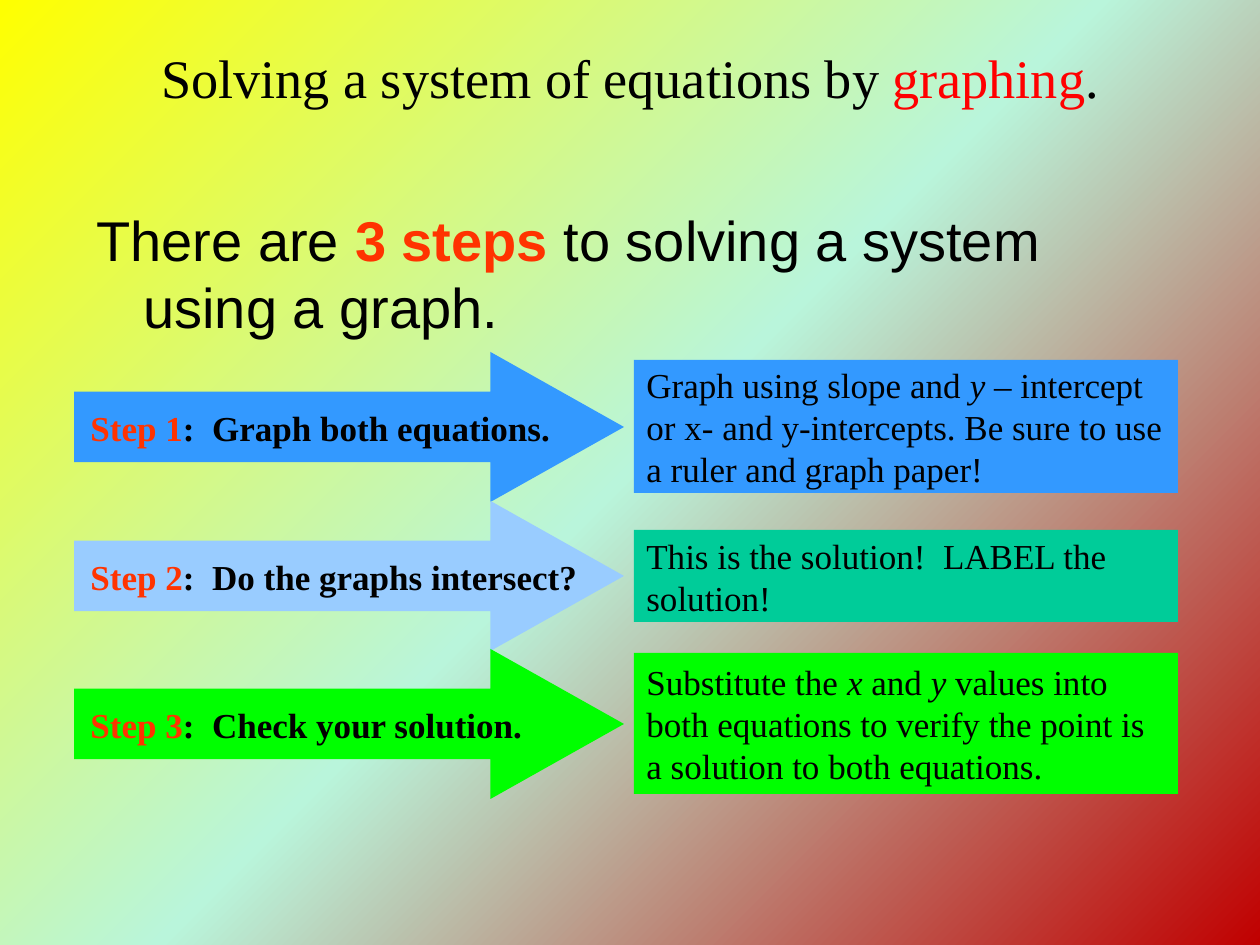
from copy import deepcopy

from pptx import Presentation
from pptx.dml.color import RGBColor
from pptx.enum.shapes import MSO_SHAPE
from pptx.enum.text import PP_ALIGN
from pptx.oxml.ns import qn
from pptx.util import Emu, Pt

PX = 914400 // 126
SERIF, SANS = "Times New Roman", "Arial"
COLORS = {
    "yellow": "FFFF00", "mint": "B9F5DB", "crimson": "C00000",
    "black": "000000", "red": "FF0000", "orange": "FF3300",
    "blue": "3399FF", "sky": "99CCFF", "teal": "00CC99", "green": "00FF00",
}
BACKDROP = [(0, "yellow"), (0.5, "mint"), (1, "crimson")]

TITLE = [("Solving a system of equations by ", "black", ""),
         ("graphing", "red", ""), (".", "black", "")]
INTRO = [("There are ", "black", ""), ("3 steps", "orange", "b"),
         (" to solving a system using a graph.", "black", "")]
STEPS = [
    dict(label="Step 1", task=":  Graph both equations.", arrow_color="blue", arrow_top=352,
         panel_color="blue", panel_top=360, panel_height=133, lines=3,
         detail=[("Graph using slope and ", "black", ""), ("y", "black", "i"),
                 (" – intercept or x- and y-intercepts. Be sure to use a ruler and graph paper!",
                  "black", "")]),
    dict(label="Step 2", task=":  Do the graphs intersect?", arrow_color="sky", arrow_top=501,
         panel_color="teal", panel_top=530, panel_height=92, lines=2,
         detail=[("This is the solution!  LABEL the solution!", "black", "")]),
    dict(label="Step 3", task=":  Check your solution.", arrow_color="green", arrow_top=649,
         panel_color="green", panel_top=653, panel_height=141, lines=3,
         detail=[("Substitute the ", "black", ""), ("x", "black", "i"), (" and ", "black", ""),
                 ("y", "black", "i"),
                 (" values into both equations to verify the point is a solution to both equations.",
                  "black", "")]),
]

ARROW_LEFT, ARROW_WIDTH, ARROW_HEIGHT = 74, 550, 150
PANEL_LEFT, PANEL_WIDTH = 634, 544
STEP_SIZE, LINE_HEIGHT, INSETS = 20, 42, 13


def rgb(name):
    return RGBColor.from_string(COLORS[name])


def px(*lengths):
    return [Emu(length * PX) for length in lengths]


def add_block(slide, preset, box, color):
    block = slide.shapes.add_shape(preset, *px(*box))
    block.shadow.inherit = False
    block.fill.solid()
    block.fill.fore_color.rgb = rgb(color)
    block.line.fill.background()
    return block


def add_text(slide, box, runs, size, font=SERIF, align=PP_ALIGN.LEFT):
    frame = slide.shapes.add_textbox(*px(*box)).text_frame
    frame.word_wrap = True
    paragraph = frame.paragraphs[0]
    paragraph.alignment = align
    paragraph.line_spacing = Pt(size * 1.2)
    for text, color, style in runs:
        run = paragraph.add_run()
        run.text = text
        run.font.name = font
        run.font.size = Pt(size)
        run.font.bold = "b" in style
        run.font.italic = "i" in style
        run.font.color.rgb = rgb(color)
    return paragraph


def add_centred_text(slide, left, width, middle, lines, runs):
    height = lines * LINE_HEIGHT + INSETS
    add_text(slide, (left, middle - height // 2, width, height), runs, STEP_SIZE)


def paint_background(slide):
    fill = slide.background.fill
    fill.gradient()
    fill.gradient_angle = 315
    last_stop = list(slide.element.iter(qn("a:gs")))[-1]
    last_stop.addnext(deepcopy(last_stop))
    for stop, (position, color) in zip(fill.gradient_stops, BACKDROP):
        stop.position = position
        stop.color.rgb = rgb(color)


def add_step(slide, step):
    arrow = add_block(slide, MSO_SHAPE.RIGHT_ARROW,
                      (ARROW_LEFT, step["arrow_top"], ARROW_WIDTH, ARROW_HEIGHT),
                      step["arrow_color"])
    arrow.adjustments[0] = 0.47
    arrow.adjustments[1] = 0.89
    add_block(slide, MSO_SHAPE.RECTANGLE,
              (PANEL_LEFT, step["panel_top"], PANEL_WIDTH, step["panel_height"]),
              step["panel_color"])
    add_centred_text(slide, ARROW_LEFT + 4, ARROW_WIDTH - 16,
                     step["arrow_top"] + ARROW_HEIGHT // 2, 1,
                     [(step["label"], "orange", "b"), (step["task"], "black", "b")])
    add_centred_text(slide, PANEL_LEFT, PANEL_WIDTH + 3,
                     step["panel_top"] + step["panel_height"] // 2,
                     step["lines"], step["detail"])


def main():
    deck = Presentation()
    deck.slide_width, deck.slide_height = px(1260, 945)
    slide = deck.slides.add_slide(deck.slide_layouts[6])
    paint_background(slide)
    add_text(slide, (63, 38, 1134, 158), TITLE, 31, align=PP_ALIGN.CENTER)
    intro = add_text(slide, (84, 199, 1092, 609), INTRO, 32, SANS)
    hanging, = px(47)
    properties = intro._p.get_or_add_pPr()
    properties.set("marL", str(hanging))
    properties.set("indent", str(-hanging))
    for step in STEPS:
        add_step(slide, step)
    deck.save("out.pptx")


if __name__ == "__main__":
    main()
